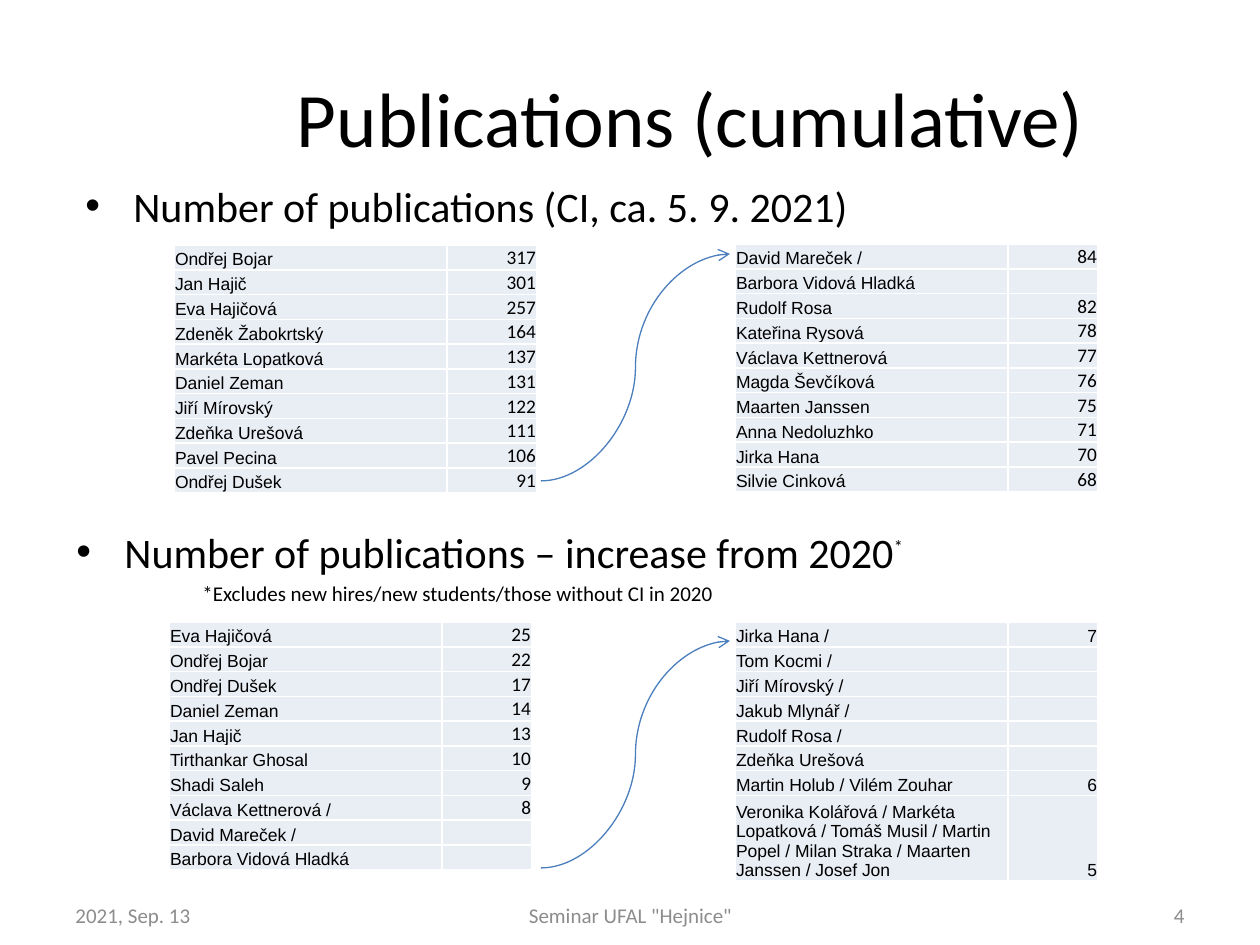
import pptx
import pptx.dml.color
import pptx.enum.shapes
import pptx.enum.text
import pptx.oxml.ns
import pptx.util
from lxml import etree

PX = 914400 / 126
COLORS = {"text": "000000", "footer": "8C8C8C", "cell": "E9EDF4",
          "border": "FFFFFF", "arrow": "4B7EBC"}
ALIGN = pptx.enum.text.PP_ALIGN
ANCHOR = pptx.enum.text.MSO_ANCHOR

ROW_HEIGHT = 24.8  # ten rows share 248 px
LONG_ROW_HEIGHT = 78
COLUMN_WIDTHS = (273, 90)

TOTALS_TOP = [
    ("Ondřej Bojar", "317"), ("Jan Hajič", "301"), ("Eva Hajičová", "257"),
    ("Zdeněk Žabokrtský", "164"), ("Markéta Lopatková", "137"),
    ("Daniel Zeman", "131"), ("Jiří Mírovský", "122"),
    ("Zdeňka Urešová", "111"), ("Pavel Pecina", "106"), ("Ondřej Dušek", "91"),
]
TOTALS_NEXT = [
    ("David Mareček /", "84"), ("Barbora Vidová Hladká", ""),
    ("Rudolf Rosa", "82"), ("Kateřina Rysová", "78"),
    ("Václava Kettnerová", "77"), ("Magda Ševčíková", "76"),
    ("Maarten Janssen", "75"), ("Anna Nedoluzhko", "71"),
    ("Jirka Hana", "70"), ("Silvie Cinková", "68"),
]
INCREASE_TOP = [
    ("Eva Hajičová", "25"), ("Ondřej Bojar", "22"), ("Ondřej Dušek", "17"),
    ("Daniel Zeman", "14"), ("Jan Hajič", "13"), ("Tirthankar Ghosal", "10"),
    ("Shadi Saleh", "9"), ("Václava Kettnerová /", "8"),
    ("David Mareček /", ""), ("Barbora Vidová Hladká", ""),
]
INCREASE_NEXT = [
    ("Jirka Hana /", "7"), ("Tom Kocmi /", ""), ("Jiří Mírovský /", ""),
    ("Jakub Mlynář /", ""), ("Rudolf Rosa /", ""), ("Zdeňka Urešová", ""),
    ("Martin Holub / Vilém Zouhar", "6"),
    ("Veronika Kolářová / Markéta Lopatková / Tomáš Musil / Martin Popel / "
     "Milan Straka / Maarten Janssen / Josef Jon", "5"),
]


def px(length):
    return pptx.util.Emu(round(length * PX))


def rgb(name):
    return pptx.dml.color.RGBColor.from_string(COLORS[name])


def add_child(parent, tag, **attributes):
    return etree.SubElement(parent, pptx.oxml.ns.qn(tag), attributes)


def style_run(run, size, font="Calibri", color="text"):
    run.font.size = pptx.util.Pt(size)
    run.font.name = font
    run.font.color.rgb = rgb(color)


def add_text(slide, box, text, size, color="text", align=ALIGN.LEFT,
             anchor=ANCHOR.MIDDLE):
    frame = slide.shapes.add_textbox(*map(px, box)).text_frame
    frame.word_wrap = True
    frame.vertical_anchor = anchor
    frame.text = text
    frame.paragraphs[0].alignment = align
    style_run(frame.paragraphs[0].runs[0], size, color=color)
    return frame


def add_bullet_heading(slide, box, text):
    frame = add_text(slide, box, text, 24, anchor=ANCHOR.TOP)
    properties = frame.paragraphs[0]._p.get_or_add_pPr()
    properties.set("marL", str(px(48)))
    properties.set("indent", str(px(-48)))
    add_child(properties, "a:buFont", typeface="Arial")
    add_child(properties, "a:buChar", char="•")
    return frame


def add_footnote(frame, text):
    # Raised mark after the heading
    mark = frame.paragraphs[0].add_run()
    mark.text = "*"
    style_run(mark, 18)
    mark._r.get_or_add_rPr().set("baseline", "48000")
    # Indented explanation below it
    note = frame.add_paragraph()
    note.text = text
    note.space_before = pptx.util.Pt(2.4)
    note._p.get_or_add_pPr().set("marL", str(px(126)))
    note._p.get_or_add_pPr().set("indent", "0")
    style_run(note.runs[0], 12)


def fill_cell(cell, text, size, font, align):
    cell.margin_left = cell.margin_right = cell.margin_top = px(1)
    cell.margin_bottom = 0
    cell.vertical_anchor = ANCHOR.BOTTOM
    properties = cell._tc.get_or_add_tcPr()
    for side in ("a:lnL", "a:lnR", "a:lnT", "a:lnB"):
        border = add_child(properties, side, w="12700")
        add_child(add_child(border, "a:solidFill"), "a:srgbClr",
                  val=COLORS["border"])
    cell.fill.solid()
    cell.fill.fore_color.rgb = rgb("cell")
    paragraph = cell.text_frame.paragraphs[0]
    paragraph.alignment = align
    if text:
        paragraph.text = text
        style_run(paragraph.runs[0], size, font)
    else:
        add_child(paragraph._p, "a:endParaRPr", sz="1000")


def add_ranking(slide, left, top, rows, count_size=11, count_font="Calibri",
                last_height=ROW_HEIGHT):
    heights = [ROW_HEIGHT] * (len(rows) - 1) + [last_height]
    ranking = slide.shapes.add_table(
        len(rows), 2, px(left), px(top), px(sum(COLUMN_WIDTHS)),
        px(sum(heights))).table
    ranking.first_row = ranking.horz_banding = False
    for column, width in zip(ranking.columns, COLUMN_WIDTHS):
        column.width = px(width)
    for index, (person, count) in enumerate(rows):
        ranking.rows[index].height = px(heights[index])
        fill_cell(ranking.cell(index, 0), person, 10, "Arial", ALIGN.LEFT)
        fill_cell(ranking.cell(index, 1), count, count_size, count_font,
                  ALIGN.RIGHT)


def add_continuation_arrow(slide, bottom, top):
    arrow = slide.shapes.add_connector(
        pptx.enum.shapes.MSO_CONNECTOR.CURVE,
        px(541), px(bottom), px(730), px(top))
    arrow.line.color.rgb = rgb("arrow")
    arrow.line.width = pptx.util.Pt(0.75)
    add_child(arrow.line._get_or_add_ln(), "a:tailEnd", type="arrow")
    add_child(arrow._element.spPr, "a:effectLst")


def main():
    presentation = pptx.Presentation()
    presentation.slide_width = px(1260)
    presentation.slide_height = px(945)
    slide = presentation.slides.add_slide(presentation.slide_layouts[6])

    # Title and headings
    add_text(slide, (184, 38, 1013, 158), "Publications (cumulative)", 44,
             align=ALIGN.CENTER)
    add_bullet_heading(slide, (73, 174, 1134, 357),
                       "Number of publications (CI, ca. 5. 9. 2021)")
    increase = add_bullet_heading(slide, (64, 520, 1181, 357),
                                  "Number of publications – increase from 2020")
    add_footnote(increase,
                 "*Excludes new hires/new students/those without CI in 2020")

    # Cumulative totals
    add_ranking(slide, 174, 245, TOTALS_TOP)
    add_ranking(slide, 735, 244, TOTALS_NEXT)
    add_continuation_arrow(slide, 481, 254)

    # Increase since the previous year
    add_ranking(slide, 169, 622, INCREASE_TOP)
    add_ranking(slide, 735, 622, INCREASE_NEXT, 10, "Arial", LONG_ROW_HEIGHT)
    add_continuation_arrow(slide, 868, 641)

    # Footer
    for left, width, text, align in (
            (63, 294, "2021, Sep. 13", ALIGN.LEFT),
            (431, 399, 'Seminar UFAL "Hejnice"', ALIGN.CENTER),
            (903, 294, "4", ALIGN.RIGHT)):
        add_text(slide, (left, 890, width, 50), text, 12, "footer", align)

    presentation.save("out.pptx")


if __name__ == "__main__":
    main()
